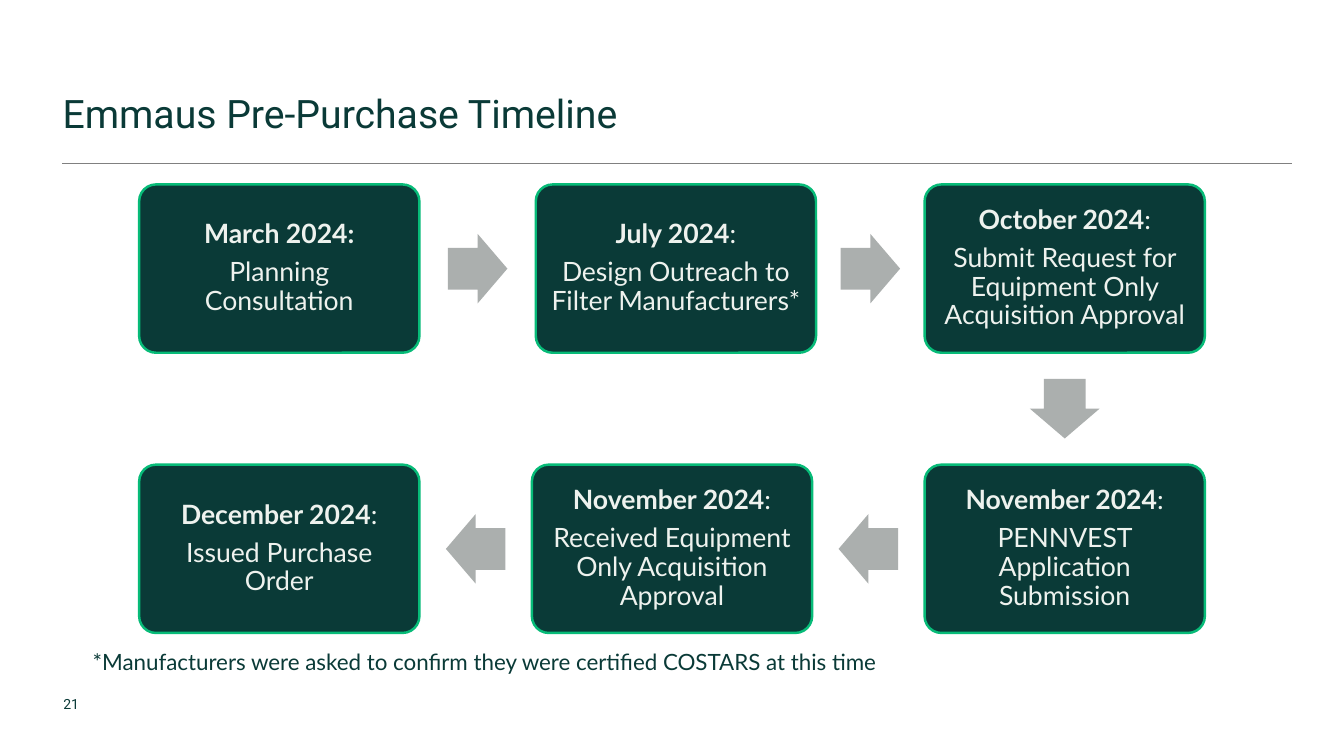
from dataclasses import dataclass
from itertools import pairwise

from lxml.etree import SubElement
from pptx import Presentation
from pptx.dml.color import RGBColor
from pptx.enum.shapes import MSO_CONNECTOR, MSO_SHAPE
from pptx.enum.text import MSO_ANCHOR, PP_ALIGN
from pptx.oxml.ns import qn
from pptx.shapes.autoshape import Shape
from pptx.slide import Slide
from pptx.text.text import TextFrame, _Run
from pptx.util import Inches, Length, Pt

COLORS = {
    "dark": "0A3A37",
    "green": "07BB78",
    "pale": "EEF2EE",
    "arrow": "ABAFAE",
    "rule": "808080",
}
SLIDE_W, SLIDE_H = Inches(13.33), Inches(7.5)
GRID_COLS, GRID_ROWS = 133.3, 75
BOX_LEFT, BOX_TOP = 13.8, 18.3
BOX_W, BOX_H = 27.8, 16.7
STEP_X, STEP_Y = 38.95, 27.8
ARROW_W, ARROW_H = 5.9, 6.9


@dataclass(frozen=True)
class Step:
    col: float
    row: int
    date: str
    colon: str
    task: str

    @property
    def left(self) -> float:
        return BOX_LEFT + self.col * STEP_X

    @property
    def top(self) -> float:
        return BOX_TOP + self.row * STEP_Y


STEPS = [
    Step(0, 0, "March 2024:", "", "Planning Consultation"),
    Step(1.01, 0, "July 2024", ":", "Design Outreach to Filter Manufacturers*"),
    Step(2, 0, "October 2024", ":", "Submit Request for Equipment Only Acquisition Approval"),
    Step(2, 1, "November 2024", ":", "PENNVEST Application Submission"),
    Step(1, 1, "November 2024", ":", "Received Equipment Only Acquisition Approval"),
    Step(0, 1, "December 2024", ":", "Issued Purchase Order"),
]


def cols(n: float) -> Length:
    return Length(round(SLIDE_W * n / GRID_COLS))


def rows(n: float) -> Length:
    return Length(round(SLIDE_H * n / GRID_ROWS))


def color(name: str) -> RGBColor:
    return RGBColor.from_string(COLORS[name])


def style_run(r: _Run, font: str, size: float, name: str, bold: bool = False) -> None:
    r.font.name = font
    r.font.size = Pt(size)
    r.font.bold = bold
    r.font.color.rgb = color(name)


def set_insets(tf: TextFrame, left: float, top: float, right: float, bottom: float) -> None:
    tf.margin_left, tf.margin_right = Inches(left), Inches(right)
    tf.margin_top, tf.margin_bottom = Inches(top), Inches(bottom)


def add_title(s: Slide, text: str) -> None:
    sp = s.shapes.title
    sp.left, sp.top, sp.width, sp.height = cols(6.2), rows(5.3), cols(121.9), rows(8.7)
    tf = sp.text_frame
    tf.text = text
    tf.vertical_anchor = MSO_ANCHOR.BOTTOM
    set_insets(tf, 0, 0.05, 0.1, 0.05)
    p = tf.paragraphs[0]
    p.alignment = PP_ALIGN.LEFT
    p.line_spacing = Pt(30)
    style_run(p.runs[0], "Roboto", 28, "dark")


def add_rule(s: Slide) -> None:
    line = s.shapes.add_connector(
        MSO_CONNECTOR.STRAIGHT, cols(6.2), rows(16.2), cols(128.1), rows(16.2))
    line.line.color.rgb = color("rule")
    line.line.width = Pt(0.75)
    SubElement(line._element.spPr, qn("a:effectLst"))


def add_label(s: Slide, left: float, top: float, width: float, height: float,
              text: str, font: str, size: float, inset: float) -> None:
    sp = s.shapes.add_textbox(cols(left), rows(top), cols(width), rows(height))
    tf = sp.text_frame
    tf.word_wrap = True
    set_insets(tf, inset, 0.05, 0.1, 0.05)
    tf.text = text
    style_run(tf.paragraphs[0].runs[0], font, size, "dark")


def add_filled(s: Slide, kind: MSO_SHAPE, left: float, top: float,
               width: float, height: float, fill: str) -> Shape:
    sp = s.shapes.add_shape(kind, cols(left), rows(top), cols(width), rows(height))
    sp.shadow.inherit = False
    sp.fill.solid()
    sp.fill.fore_color.rgb = color(fill)
    return sp


def add_step(s: Slide, step: Step) -> None:
    sp = add_filled(s, MSO_SHAPE.ROUNDED_RECTANGLE, step.left, step.top, BOX_W, BOX_H, "dark")
    sp.adjustments[0] = 0.1
    sp.line.color.rgb = color("green")
    sp.line.width = Pt(1.75)
    tf = sp.text_frame
    tf.word_wrap = True
    tf.vertical_anchor = MSO_ANCHOR.MIDDLE
    set_insets(tf, 0.08, 0.08, 0.08, 0.08)
    tf.text = f"{step.date}\n{step.task}"
    date, task = tf.paragraphs
    for p in (date, task):
        p.alignment = PP_ALIGN.CENTER
        p.line_spacing = 0.9
        p.space_after = Pt(6.65)
    style_run(date.runs[0], "Lato", 19, "pale", bold=True)
    style_run(task.runs[0], "Lato", 19, "pale")
    if step.colon:
        r = date.add_run()
        r.text = step.colon
        style_run(r, "Lato", 19, "pale")


def add_arrow(s: Slide, start: Step, end: Step) -> None:
    center_x = (start.left + end.left + BOX_W) / 2
    center_y = (start.top + end.top + BOX_H) / 2
    sp = add_filled(s, MSO_SHAPE.RIGHT_ARROW, center_x - ARROW_W / 2,
                    center_y - ARROW_H / 2, ARROW_W, ARROW_H, "arrow")
    sp.adjustments[0], sp.adjustments[1] = 0.6, 0.5
    sp.line.fill.background()
    if end.row > start.row:
        sp.rotation = 90
    elif end.col < start.col:
        sp.rotation = 180


def main() -> None:
    prs = Presentation()
    prs.slide_width, prs.slide_height = SLIDE_W, SLIDE_H
    s = prs.slides.add_slide(prs.slide_layouts[5])
    add_title(s, "Emmaus Pre-Purchase Timeline")
    add_rule(s)
    for step in STEPS:
        add_step(s, step)
    for start, end in pairwise(STEPS):
        add_arrow(s, start, end)
    add_label(s, 9.2, 63.8, 118.4, 3,
              "*Manufacturers were asked to confirm they were certified COSTARS at this time",
              "Lato", 16, 0)
    add_label(s, 5.3, 68.5, 5.2, 2.7, "21", "Roboto", 10, 0.1)
    prs.save("out.pptx")


if __name__ == "__main__":
    main()
